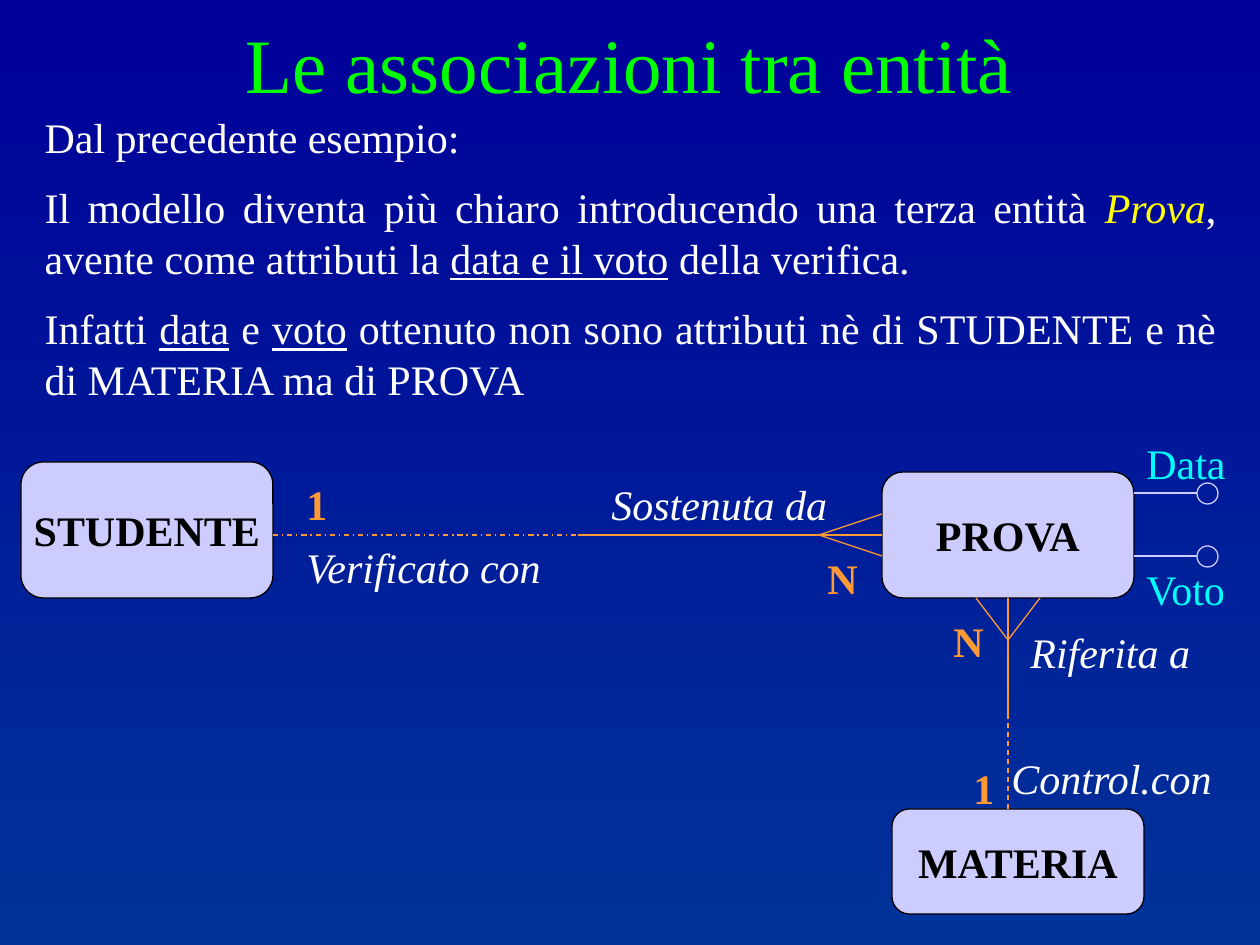
from lxml import etree
from pptx import Presentation
from pptx import util as u
from pptx.dml.color import RGBColor
from pptx.enum import dml, shapes, text
from pptx.oxml.ns import qn

SCALE = 914400 / 126
FONT = "Times New Roman"
WHITE = RGBColor(255, 255, 255)
BLACK = RGBColor(0, 0, 0)
GREEN = RGBColor(0, 255, 0)
YELLOW = RGBColor(255, 255, 0)
CYAN = RGBColor(0, 255, 255)
ORANGE = RGBColor(255, 153, 51)
LILAC = RGBColor(204, 204, 255)
NAVY = RGBColor(0, 0, 153)
BLUE = RGBColor(0, 51, 153)

ROLE = {"italic": True}
COUNT = {"bold": True, "color": ORANGE}
ATTRIBUTE = {"color": CYAN}
UNDER = {"underline": True}

PARAGRAPHS = [
    [("Dal precedente esempio:", {})],
    [("Il modello diventa più chiaro introducendo una terza entità ", {}),
     ("Prova", {"italic": True, "color": YELLOW}),
     (", avente come attributi la ", {}),
     ("data e il voto", UNDER),
     (" della verifica.", {})],
    [("Infatti ", {}), ("data", UNDER), (" e ", {}), ("voto", UNDER),
     (" ottenuto non sono attributi nè di STUDENTE e nè di MATERIA ma di PROVA", {})],
]

LABELS = [
    ("N", 815, 546, 55, COUNT),
    ("Sostenuta da", 599, 472, 241, ROLE),
    ("Verificato con", 294, 535, 284, ROLE),
    ("1", 294, 472, 47, COUNT),
    ("Riferita a", 1018, 620, 185, ROLE),
    ("Control.con", 999, 746, 229, ROLE),
    ("Data", 1134, 431, 105, ATTRIBUTE),
    ("Voto", 1134, 557, 110, ATTRIBUTE),
    ("1", 961, 756, 47, COUNT),
    ("N", 941, 609, 55, COUNT),
]


def px(length):
    return u.Emu(round(length * SCALE))


def place(shape, left, top, width, height):
    sides = {"left": left, "top": top, "width": width, "height": height}
    for name, value in sides.items():
        setattr(shape, name, px(value))


def add_span(para, words, style):
    span = para.add_run()
    span.text = words
    values = {"name": FONT, "size": u.Pt(24), "color": WHITE, **style}
    span.font.fill.solid()
    span.font.fill.fore_color.rgb = values.pop("color")
    for name, value in values.items():
        setattr(span.font, name, value)


def set_frame(frame, **values):
    values = {"auto_size": text.MSO_AUTO_SIZE.NONE,
              "vertical_anchor": text.MSO_ANCHOR.TOP,
              "word_wrap": True, **values}
    for name, value in values.items():
        setattr(frame, name, value)


def set_line(line, color):
    line.color.rgb = color
    line.width = u.Pt(0.75)


def paint_background(page):
    fill = page.background.fill
    fill.gradient()
    fill.gradient_angle = 270
    for stop, position, color in zip(fill.gradient_stops, (0, 1), (NAVY, BLUE)):
        stop.position = position
        stop.color.rgb = color


def fill_title(title):
    place(title, 73, 10, 1113, 105)
    set_frame(title.text_frame)
    para = title.text_frame.paragraphs[0]
    para.alignment = text.PP_ALIGN.CENTER
    add_span(para, "Le associazioni tra entità", {"size": u.Pt(44), "color": GREEN})


def fill_body(body):
    place(body, 32, 105, 1197, 315)
    frame = body.text_frame
    set_frame(frame)
    for index, spans in enumerate(PARAGRAPHS):
        para = frame.add_paragraph() if index else frame.paragraphs[0]
        para.alignment = text.PP_ALIGN.JUSTIFY
        para.space_before = u.Pt(11.5 if index else 0)
        props = para._p.get_or_add_pPr()
        props.set("marL", "0")
        props.set("indent", "0")
        etree.SubElement(props, qn("a:buNone"))
        for words, style in spans:
            add_span(para, words, style)


def add_label(page, words, left, top, width, style):
    box = page.shapes.add_textbox(px(left), px(top), px(width), px(63))
    set_frame(box.text_frame, word_wrap=False)
    add_span(box.text_frame.paragraphs[0], words, style)


def add_entity(page, name, left, top, height):
    box = page.shapes.add_shape(shapes.MSO_SHAPE.ROUNDED_RECTANGLE,
                                px(left), px(top), px(252), px(height))
    box.shadow.inherit = False
    box.fill.solid()
    box.fill.fore_color.rgb = LILAC
    set_line(box.line, BLACK)
    set_frame(box.text_frame, word_wrap=False,
              vertical_anchor=text.MSO_ANCHOR.MIDDLE)
    para = box.text_frame.paragraphs[0]
    para.alignment = text.PP_ALIGN.CENTER
    add_span(para, name, {"bold": True, "color": BLACK})
    return box


def add_line(page, start, end, color=ORANGE, dash=None):
    line = page.shapes.add_connector(shapes.MSO_CONNECTOR.STRAIGHT,
                                     *map(px, start + end))
    set_line(line.line, color)
    if dash:
        line.line.dash_style = dash
    etree.SubElement(line._element.spPr, qn("a:effectLst"))
    return line


def add_fork(page, tip, ends):
    for end in ends:
        add_line(page, tip, end)


def add_attribute(page, middle):
    add_line(page, (1134, middle), (1197, middle), LILAC)
    circle = page.shapes.add_shape(shapes.MSO_SHAPE.OVAL, px(1197),
                                   px(middle - 10), px(21), px(21))
    circle.shadow.inherit = False
    circle.fill.background()
    set_line(circle.line, LILAC)


def main():
    deck = Presentation()
    deck.slide_width, deck.slide_height = px(1260), px(945)
    page = deck.slides.add_slide(deck.slide_layouts[1])
    paint_background(page)
    fill_title(page.shapes.title)
    fill_body(page.placeholders[1])

    add_entity(page, "STUDENTE", 21, 462, 136)
    exam = add_entity(page, "PROVA", 882, 472, 126)
    add_entity(page, "MATERIA", 892, 809, 105)

    add_line(page, (273, 535), (578, 535), dash=dml.MSO_LINE.DASH_DOT)
    add_line(page, (578, 535), (882, 535)).end_connect(exam, 1)
    add_line(page, (1008, 598), (1008, 714)).begin_connect(exam, 2)
    add_line(page, (1008, 714), (1008, 809), dash=dml.MSO_LINE.DASH)
    add_fork(page, (819, 535), [(882, 514), (882, 556)])
    add_fork(page, (1008, 640), [(976, 598), (1040, 598)])

    for middle in (493, 556):
        add_attribute(page, middle)
    for label in LABELS:
        add_label(page, *label)
    deck.save("out.pptx")


if __name__ == "__main__":
    main()
